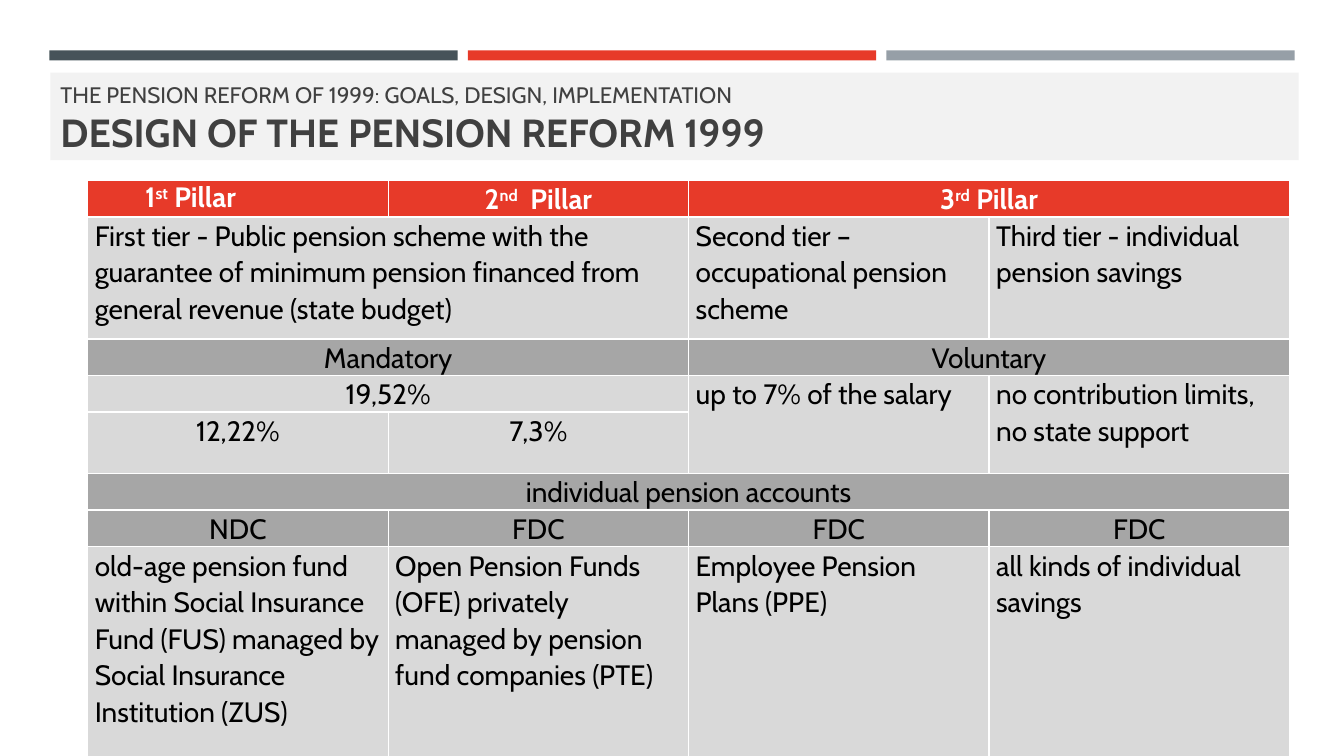
from pptx import Presentation
from pptx.dml.color import RGBColor
from pptx.enum.shapes import MSO_SHAPE
from pptx.enum.text import MSO_ANCHOR, MSO_AUTO_SIZE, PP_ALIGN
from pptx.util import Inches, Pt

RECTANGLE = MSO_SHAPE.RECTANGLE
BOTTOM = MSO_ANCHOR.BOTTOM
NO_AUTOFIT = MSO_AUTO_SIZE.NONE
LEFT, CENTER = PP_ALIGN.LEFT, PP_ALIGN.CENTER
TITLE_ONLY_LAYOUT = 5

FONT = "Cabin"
RED, LIGHT, DARK = "E73A29", "D9D9D9", "A6A6A6"
BAR_COLORS = ["465359", RED, "969FA7"]
COLUMN_WIDTH = 2.98
ROW_HEIGHTS = [0.29, 1.21, 0.29, 0.29, 0.61, 0.29, 0.29, 2.14]

# row, column, rows spanned, columns spanned, alignment, fill, text (^ encloses superscript)
CELLS = [
    (0, 0, 1, 1, LEFT, RED, "1^st^ Pillar"),
    (0, 1, 1, 1, CENTER, RED, "2^nd^  Pillar"),
    (0, 2, 1, 2, CENTER, RED, "3^rd^ Pillar"),
    (1, 0, 1, 2, LEFT, LIGHT, "First tier - Public pension scheme with the guarantee of "
                              "minimum pension financed from general revenue (state budget)"),
    (1, 2, 1, 1, LEFT, LIGHT, "Second tier – occupational pension scheme"),
    (1, 3, 1, 1, LEFT, LIGHT, "Third tier - individual pension savings"),
    (2, 0, 1, 2, CENTER, DARK, "Mandatory"),
    (2, 2, 1, 2, CENTER, DARK, "Voluntary"),
    (3, 0, 1, 2, CENTER, LIGHT, "19,52%"),
    (3, 2, 2, 1, LEFT, LIGHT, "up to 7% of the salary"),
    (3, 3, 2, 1, LEFT, LIGHT, "no contribution limits, no state support"),
    (4, 0, 1, 1, CENTER, LIGHT, "12,22%"),
    (4, 1, 1, 1, CENTER, LIGHT, "7,3%"),
    (5, 0, 1, 4, CENTER, DARK, "individual pension accounts"),
    (6, 0, 1, 1, CENTER, DARK, "NDC"),
    (6, 1, 1, 1, CENTER, DARK, "FDC"),
    (6, 2, 1, 1, CENTER, DARK, "FDC"),
    (6, 3, 1, 1, CENTER, DARK, "FDC"),
    (7, 0, 1, 1, LEFT, LIGHT, "old-age pension fund within Social Insurance Fund (FUS) "
                              "managed by Social Insurance Institution (ZUS)"),
    (7, 1, 1, 1, LEFT, LIGHT, "Open Pension Funds (OFE) privately managed by pension "
                              "fund companies (PTE)"),
    (7, 2, 1, 1, LEFT, LIGHT, "Employee Pension Plans (PPE)"),
    (7, 3, 1, 1, LEFT, LIGHT, "all kinds of individual savings"),
]


def set_fill(target, color):
    target.fill.solid()
    target.fill.fore_color.rgb = RGBColor.from_string(color)


def format_run(run, size, color, bold):
    run.font.name = FONT
    run.font.size = Pt(size)
    run.font.bold = bold
    run.font.color.rgb = RGBColor.from_string(color)


def add_bars(slide):
    for index, color in enumerate(BAR_COLORS):
        bar = slide.shapes.add_shape(RECTANGLE, Inches(0.49 + 4.15 * index), Inches(0.5),
                                     Inches(4.05), Inches(0.1))
        set_fill(bar, color)
        bar.line.fill.background()
        bar.shadow.inherit = False


def add_title(slide):
    title = slide.shapes.title
    title.left, title.top = Inches(0.5), Inches(0.72)
    title.width, title.height = Inches(12.38), Inches(0.87)
    set_fill(title, "F2F2F2")
    frame = title.text_frame
    frame.text = ("THE PENSION REFORM OF 1999: GOALS, DESIGN, IMPLEMENTATION\v"
                  "DESIGN OF THE PENSION REFORM 1999")
    frame.word_wrap = True
    frame.auto_size = NO_AUTOFIT
    frame.vertical_anchor = BOTTOM
    paragraph = frame.paragraphs[0]
    paragraph.alignment = LEFT
    paragraph.line_spacing = 1.0
    section, heading = paragraph.runs
    format_run(section, 16, "404040", False)
    format_run(heading, 28, "404040", True)


def fill_cell(cell, alignment, fill, text):
    set_fill(cell, fill)
    is_header = fill == RED
    paragraph = cell.text_frame.paragraphs[0]
    paragraph.alignment = alignment
    if is_header and alignment == LEFT:
        paragraph._p.get_or_add_pPr().set("marL", str(Inches(0.5)))
    else:
        paragraph.line_spacing = 1.07
    for index, part in enumerate(text.split("^")):
        run = paragraph.add_run()
        run.text = part
        format_run(run, 20, "FFFFFF" if is_header else "000000", is_header)
        if index % 2:
            run.font._element.set("baseline", "30000")


def add_pillar_table(slide):
    frame = slide.shapes.add_table(len(ROW_HEIGHTS), 4, Inches(0.87), Inches(1.79),
                                   Inches(4 * COLUMN_WIDTH), Inches(sum(ROW_HEIGHTS)))
    table = frame.table
    table.horz_banding = False
    for column in table.columns:
        column.width = Inches(COLUMN_WIDTH)
    for row, height in zip(table.rows, ROW_HEIGHTS):
        row.height = Inches(height)
    for cell in table.iter_cells():
        cell.margin_left = cell.margin_right = Inches(0.07)
        cell.margin_top = cell.margin_bottom = 0
    for row, column, row_span, column_span, alignment, fill, text in CELLS:
        cell = table.cell(row, column)
        if row_span * column_span > 1:
            cell.merge(table.cell(row + row_span - 1, column + column_span - 1))
        fill_cell(cell, alignment, fill, text)


def main():
    presentation = Presentation()
    presentation.slide_width = Inches(13.33)
    presentation.slide_height = Inches(7.5)
    slide = presentation.slides.add_slide(presentation.slide_layouts[TITLE_ONLY_LAYOUT])
    add_bars(slide)
    add_title(slide)
    add_pillar_table(slide)
    presentation.save("out.pptx")


if __name__ == "__main__":
    main()
